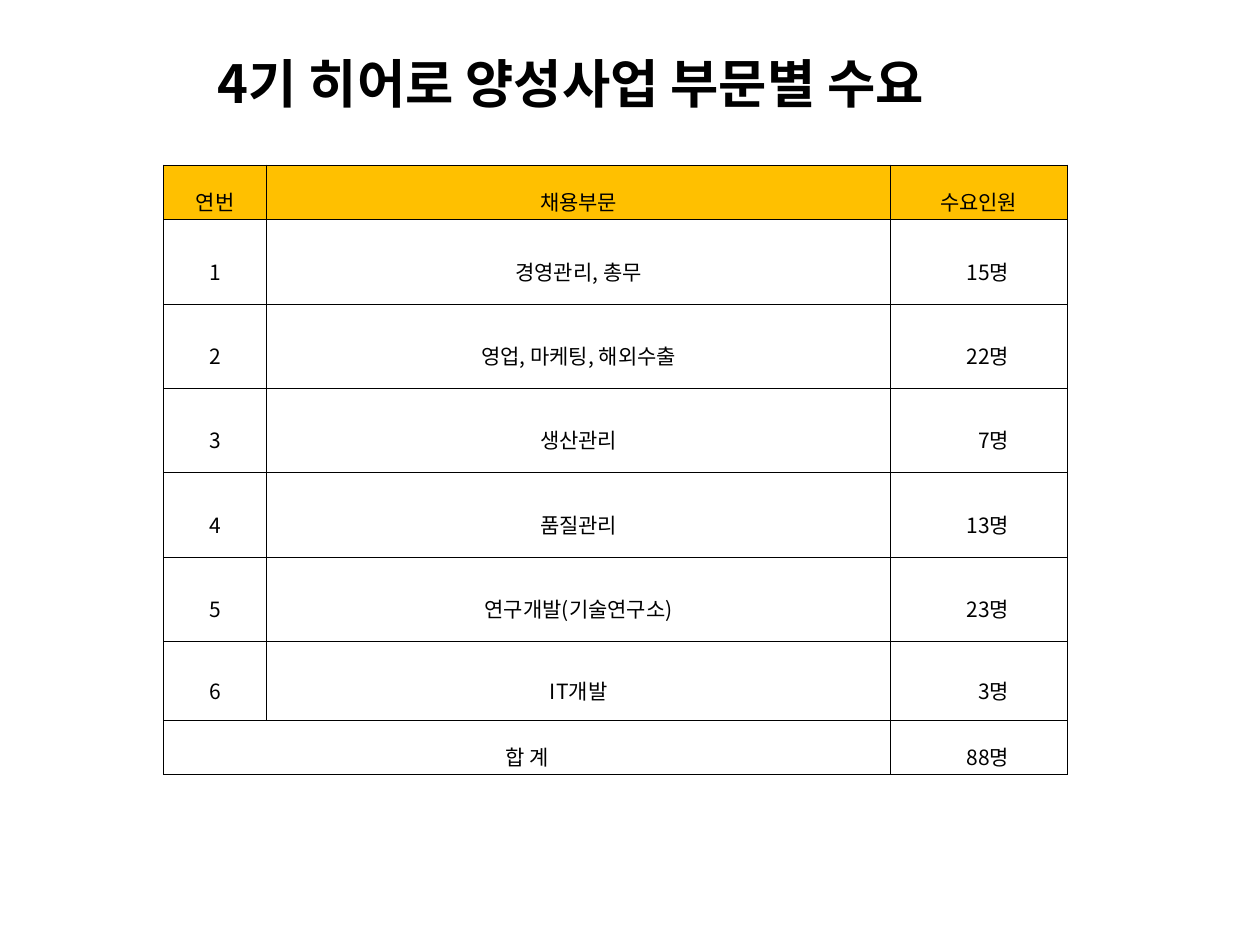
from lxml import etree
from pptx import Presentation
from pptx.dml.color import RGBColor
from pptx.enum.text import MSO_ANCHOR, MSO_AUTO_SIZE, PP_ALIGN
from pptx.oxml.ns import qn
from pptx.util import Cm, Pt

CENTER, RIGHT = PP_ALIGN.CENTER, PP_ALIGN.RIGHT
MIDDLE = MSO_ANCHOR.MIDDLE
FIT_SHAPE = MSO_AUTO_SIZE.SHAPE_TO_FIT_TEXT
FONT = "Noto Sans CJK KR"
BLACK, WHITE, AMBER = "000000", "FFFFFF", "FFC000"


def write(p, text, size, bold=False):
    r = p.add_run()
    r.text = text
    font = {"name": FONT, "size": Pt(size), "bold": bold}
    for name, value in font.items():
        setattr(r.font, name, value)
    r.font.color.rgb = RGBColor.from_string(BLACK)
    etree.SubElement(r.font._element, qn("a:ea"), typeface=FONT)


def draw_borders(cell):
    tcPr = cell._tc.get_or_add_tcPr()
    for side in ("lnL", "lnR", "lnT", "lnB"):
        ln = etree.SubElement(tcPr, qn(f"a:{side}"), w=str(Pt(0.56)))
        fill = etree.SubElement(ln, qn("a:solidFill"))
        etree.SubElement(fill, qn("a:srgbClr"), val=BLACK)


prs = Presentation()
prs.slide_width, prs.slide_height = Cm(25.4), Cm(19.05)
s = prs.slides.add_slide(prs.slide_layouts[6])

# Demand table
rows = [
    ("연번", "채용부문", "수요인원"),
    ("1", "경영관리, 총무", "15명"),
    ("2", "영업, 마케팅, 해외수출", "22명"),
    ("3", "생산관리", "7명"),
    ("4", "품질관리", "13명"),
    ("5", "연구개발(기술연구소)", "23명"),
    ("6", "IT개발", "3명"),
    ("합 계", "", "88명"),
]
widths = [2.08, 12.57, 3.56]
heights = [1.1] + [1.7] * 5 + [1.6, 1.05]
table = s.shapes.add_table(len(rows), len(widths), Cm(3.3), Cm(3.33),
                           Cm(sum(widths)), Cm(sum(heights))).table
for col, width in zip(table.columns, widths):
    col.width = Cm(width)
for row, height in zip(table.rows, heights):
    row.height = Cm(height)

for i, texts in enumerate(rows):
    for j, text in enumerate(texts):
        cell = table.cell(i, j)
        is_count = i > 0 and j == 2
        layout = {
            "vertical_anchor": MIDDLE,
            "margin_left": Cm(0.1),
            "margin_right": Cm(1.17 if is_count else 0.1),
            "margin_top": Cm(0.05),
            "margin_bottom": Cm(0.05),
        }
        for name, value in layout.items():
            setattr(cell, name, value)
        draw_borders(cell)
        cell.fill.solid()
        cell.fill.fore_color.rgb = RGBColor.from_string(WHITE if i else AMBER)
        p = cell.text_frame.paragraphs[0]
        p.alignment = RIGHT if is_count else CENTER
        p.line_spacing = 1.6
        if text:
            write(p, text, 12)

total_row = len(rows) - 1
table.cell(total_row, 0).merge(table.cell(total_row, 1))

# Title
tf = s.shapes.add_textbox(Cm(4.14), Cm(0.91), Cm(16.5), Cm(1.55)).text_frame
tf.word_wrap = False
tf.auto_size = FIT_SHAPE
write(tf.paragraphs[0], "4기 히어로 양성사업 부문별 수요", 30, bold=True)

prs.save("out.pptx")
